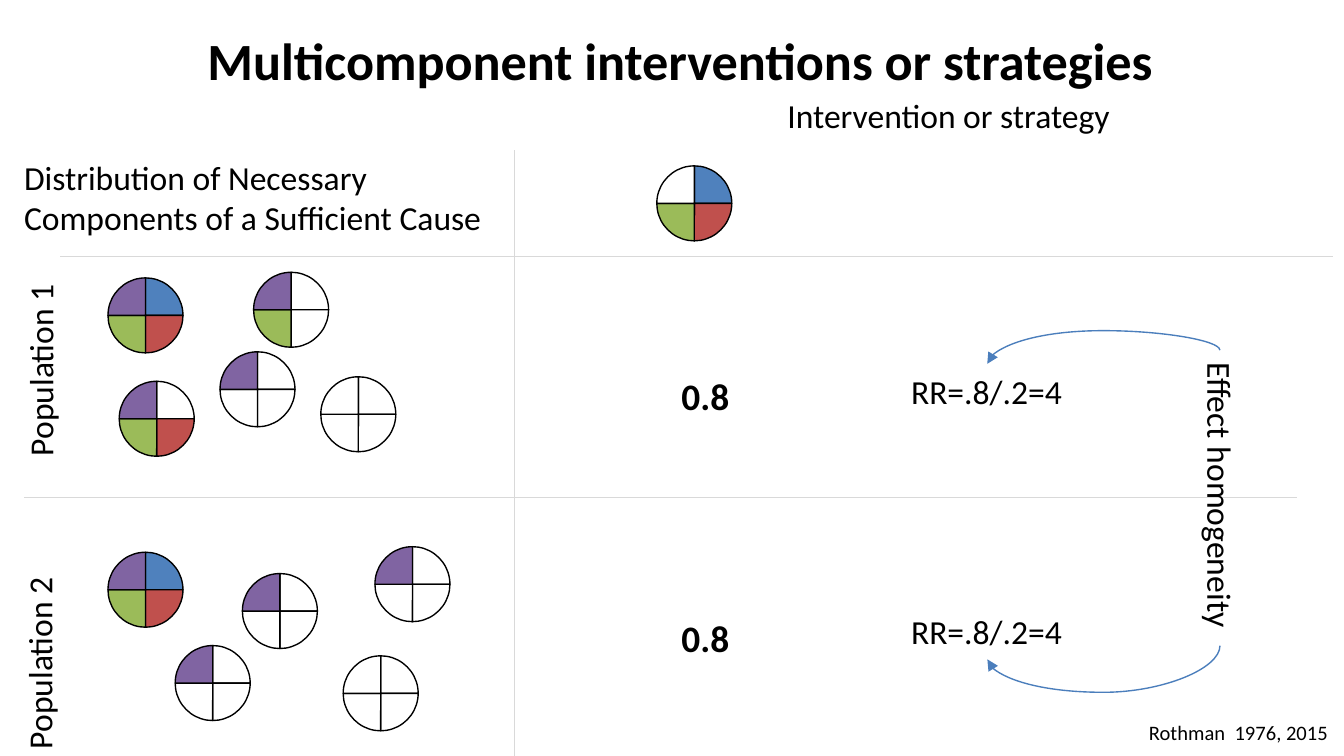
from lxml.etree import SubElement
from pptx import Presentation
from pptx.chart.data import CategoryChartData
from pptx.dml.color import RGBColor
from pptx.enum.chart import XL_CHART_TYPE
from pptx.enum.shapes import MSO_CONNECTOR
from pptx.enum.text import MSO_AUTO_SIZE, PP_ALIGN
from pptx.oxml import parse_xml
from pptx.oxml.ns import nsdecls, qn
from pptx.util import Pt

BLACK = RGBColor(0x00, 0x00, 0x00)
WHITE = RGBColor(0xFF, 0xFF, 0xFF)
BLUE = RGBColor(0x4F, 0x81, 0xBD)
RED = RGBColor(0xC0, 0x50, 0x4D)
GREEN = RGBColor(0x9B, 0xBB, 0x59)
PURPLE = RGBColor(0x80, 0x64, 0xA2)
GRID = RGBColor(0xD9, 0xD9, 0xD9)
ARROW = RGBColor(0x4B, 0x7E, 0xBC)

FONT = "Calibri"
COMPONENT_COLORS = (BLUE, RED, GREEN, PURPLE)
PIE_WIDTH, PIE_HEIGHT, PIE_DIAMETER = 96, 60, 40.2

# left, top, components present
PIES = [
    (30, 139, (BLUE, RED, GREEN, PURPLE)),
    (36, 194.4, (RED, GREEN, PURPLE)),
    (108, 136, (GREEN, PURPLE)),
    (90, 178.6, (PURPLE,)),
    (144, 192, ()),
    (324, 79, (BLUE, RED, GREEN)),
    (30, 286, (BLUE, RED, GREEN, PURPLE)),
    (156, 341.5, ()),
    (102, 297.4, (PURPLE,)),
    (66, 336, (PURPLE,)),
    (173, 283, (PURPLE,)),
]

TITLE = ("Multicomponent interventions or strategies", 69, 11.5, 590.5, 41)
LABELS = [
    (["Distribution of Necessary", "Components of a Sufficient Cause"], 5.8, 80.6, 263, 51, 18, False, 0),
    (["Intervention or strategy"], 414.7, 47.5, 193.7, 29, 18, False, 0),
    (["Population 1"], -32.4, 183, 108, 29, 18, False, 270),
    (["Population 2"], -33, 340, 108, 29, 18, False, 270),
    (["Effect homogeneity"], 574.6, 252, 158.4, 29, 18, False, 90),
    (["0.8"], 358, 196.6, 40.3, 31.5, 20, True, 0),
    (["0.8"], 358, 326.2, 40.3, 31.5, 20, True, 0),
    (["RR=.8/.2=4"], 481, 195, 96.5, 29, 18, False, 0),
    (["RR=.8/.2=4"], 481, 324, 96.5, 29, 18, False, 0),
    (["Rothman  1976, 2015"], 608.4, 382.3, 111.6, 20.9, 11, False, 0),
]

GRID_LINES = [
    (13, 266.4, 694.8, 266.4),
    (32.4, 137.5, 714.2, 137.5),
    (275.8, 80.6, 275.8, 405),
]

# begin x, begin y, end x, end y, rotation, bend
CURVES = [
    (594.9, 253.6, 587.6, 129, 270, -143300),
    (587.6, 287.3, 594.9, 411.9, 90, 341500),
]


def add_pie(slide, left, top, present):
    data = CategoryChartData()
    data.categories = ["1", "2", "3", "4"]
    data.add_series("Series 1", [25] * 4)
    chart = slide.shapes.add_chart(
        XL_CHART_TYPE.PIE, Pt(left), Pt(top), Pt(PIE_WIDTH), Pt(PIE_HEIGHT), data
    ).chart
    chart.has_legend = False
    chart.has_title = False
    chart.font.name = FONT
    chart.font.size = Pt(18)
    chart.font.color.rgb = BLACK
    plot = chart.plots[0]
    plot.vary_by_categories = True
    for index, color in enumerate(COMPONENT_COLORS):
        part = plot.series[0].points[index].format
        part.fill.solid()
        part.fill.fore_color.rgb = color if color in present else WHITE
        part.line.color.rgb = BLACK
        part.line.width = Pt(0.75)
    width, height = PIE_DIAMETER / PIE_WIDTH, PIE_DIAMETER / PIE_HEIGHT
    layout = parse_xml(
        f'<c:layout {nsdecls("c")}><c:manualLayout><c:layoutTarget val="inner"/>'
        '<c:xMode val="edge"/><c:yMode val="edge"/>'
        f'<c:x val="{(1 - width) / 2:.4f}"/><c:y val="{(1 - height) / 2:.4f}"/>'
        f'<c:w val="{width:.4f}"/><c:h val="{height:.4f}"/>'
        "</c:manualLayout></c:layout>"
    )
    plot_area = chart._chartSpace.find(".//" + qn("c:plotArea"))
    for old in plot_area.findall(qn("c:layout")):
        plot_area.remove(old)
    plot_area.insert(0, layout)


def add_label(slide, lines, left, top, width, height, size, bold=False,
              rotation=0, wrap=False, alignment=PP_ALIGN.LEFT):
    box = slide.shapes.add_textbox(Pt(left), Pt(top), Pt(width), Pt(height))
    box.rotation = rotation
    frame = box.text_frame
    frame.word_wrap = wrap
    frame.auto_size = MSO_AUTO_SIZE.SHAPE_TO_FIT_TEXT
    for index, line in enumerate(lines):
        paragraph = frame.add_paragraph() if index else frame.paragraphs[0]
        paragraph.alignment = alignment
        run = paragraph.add_run()
        run.text = line
        run.font.name = FONT
        run.font.size = Pt(size)
        run.font.bold = bold
        run.font.color.rgb = BLACK


def add_line(slide, kind, points, color):
    connector = slide.shapes.add_connector(kind, *(Pt(value) for value in points))
    connector.line.color.rgb = color
    connector.line.width = Pt(0.75)
    SubElement(connector._element.spPr, qn("a:effectLst"))
    return connector


def add_curved_arrow(slide, points, rotation, bend):
    connector = add_line(slide, MSO_CONNECTOR.CURVE, points, ARROW)
    properties = connector._element.spPr
    properties.find(qn("a:xfrm")).set("rot", str(rotation * 60000))
    geometry = properties.find(qn("a:prstGeom"))
    adjustments = geometry.find(qn("a:avLst"))
    if adjustments is None:
        adjustments = SubElement(geometry, qn("a:avLst"))
    SubElement(adjustments, qn("a:gd"), name="adj1", fmla=f"val {bend}")
    SubElement(properties.find(qn("a:ln")), qn("a:tailEnd"), type="triangle")


def main():
    presentation = Presentation()
    presentation.slide_width = Pt(720)
    presentation.slide_height = Pt(405)
    slide = presentation.slides.add_slide(presentation.slide_layouts[6])
    for pie in PIES:
        add_pie(slide, *pie)
    for points in GRID_LINES:
        add_line(slide, MSO_CONNECTOR.STRAIGHT, points, GRID)
    title, *place = TITLE
    add_label(slide, [title], *place, 28, True, wrap=True, alignment=PP_ALIGN.CENTER)
    for label in LABELS:
        add_label(slide, *label)
    for *points, rotation, bend in CURVES:
        add_curved_arrow(slide, points, rotation, bend)
    presentation.save("out.pptx")


if __name__ == "__main__":
    main()
